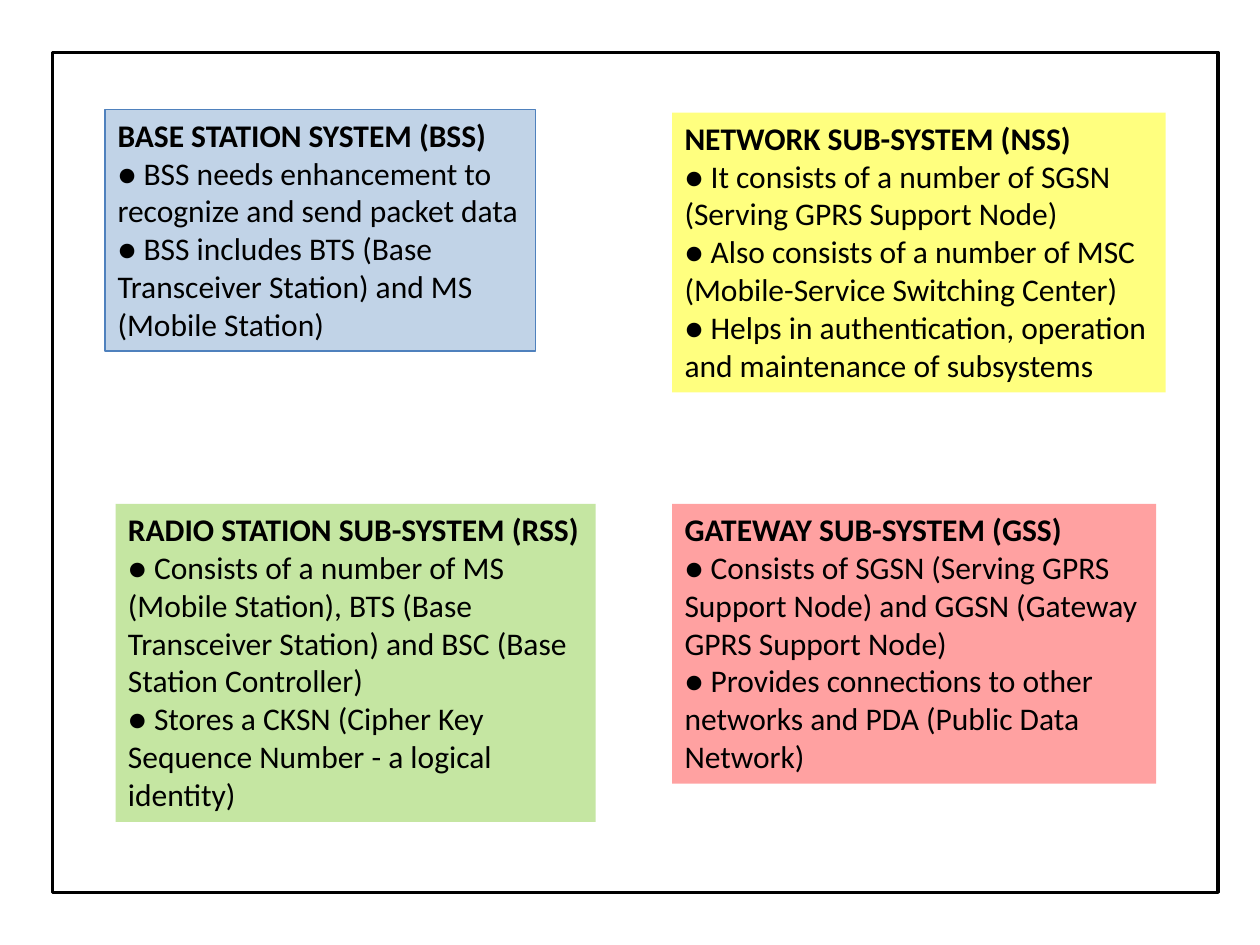
from typing import NamedTuple

from lxml import etree
from pptx import Presentation
from pptx.dml.color import RGBColor
from pptx.enum.shapes import MSO_SHAPE
from pptx.enum.text import MSO_AUTO_SIZE
from pptx.oxml.ns import qn
from pptx.util import Cm, Pt

RECTANGLE = MSO_SHAPE.RECTANGLE
FIT_SHAPE = MSO_AUTO_SIZE.SHAPE_TO_FIT_TEXT
BLANK_LAYOUT = 6

BLACK = RGBColor(0x00, 0x00, 0x00)
BLUE = RGBColor(0x4F, 0x81, 0xBD)
YELLOW = RGBColor(0xFF, 0xFF, 0x00)
GREEN = RGBColor(0x92, 0xD0, 0x50)
RED = RGBColor(0xFF, 0x00, 0x00)

RIGHT_COLUMN = 13.55
LOWER_ROW = 10.16


class Panel(NamedTuple):
    """A tinted text panel; lengths in cm, opacity in percent."""
    left: float
    top: float
    width: float
    height: float
    color: RGBColor
    opacity: int
    outlined: bool
    heading: str
    lines: list[str]


PANELS = [
    Panel(2.12, 2.21, 8.68, 4.87, BLUE, 35, True, "BASE STATION SYSTEM (BSS)", [
        "● BSS needs enhancement to",
        "recognize and send packet data",
        "● BSS includes BTS (Base",
        "Transceiver Station) and MS",
        "(Mobile Station)",
    ]),
    Panel(RIGHT_COLUMN, 2.27, 9.95, 5.64, YELLOW, 50, False, "NETWORK SUB-SYSTEM (NSS)", [
        "● It consists of a number of SGSN",
        "(Serving GPRS Support Node)",
        "● Also consists of a number of MSC",
        "(Mobile-Service Switching Center)",
        "● Helps in authentication, operation",
        "and maintenance of subsystems",
    ]),
    Panel(2.33, LOWER_ROW, 9.68, 6.41, GREEN, 53, False, "RADIO STATION SUB-SYSTEM (RSS)", [
        "● Consists of a number of MS",
        "(Mobile Station), BTS (Base",
        "Transceiver Station) and BSC (Base",
        "Station Controller)",
        "● Stores a CKSN (Cipher Key",
        "Sequence Number - a logical",
        "identity)",
    ]),
    Panel(RIGHT_COLUMN, LOWER_ROW, 9.76, 5.64, RED, 37, False, "GATEWAY SUB-SYSTEM (GSS)", [
        "● Consists of SGSN (Serving GPRS",
        "Support Node) and GGSN (Gateway",
        "GPRS Support Node)",
        "● Provides connections to other",
        "networks and PDA (Public Data",
        "Network)",
    ]),
]


def add_frame(s) -> None:
    frame = s.shapes.add_shape(RECTANGLE, Cm(1.06), Cm(1.06), Cm(23.5), Cm(16.93))
    frame.shadow.inherit = False
    frame.fill.background()
    frame.line.color.rgb = BLACK
    frame.line.width = Pt(2)


def add_panel(s, panel: Panel) -> None:
    sp = s.shapes.add_textbox(Cm(panel.left), Cm(panel.top),
                              Cm(panel.width), Cm(panel.height))
    sp.fill.solid()
    sp.fill.fore_color.rgb = panel.color
    color = sp.fill._xPr.find(f"{qn('a:solidFill')}/{qn('a:srgbClr')}")
    etree.SubElement(color, qn("a:alpha"), val=str(panel.opacity * 1000))
    if panel.outlined:
        sp.line.color.rgb = panel.color
        sp.line.width = Pt(0.75)

    tf = sp.text_frame
    tf.word_wrap = False
    tf.auto_size = FIT_SHAPE
    tf.text = "\n".join([panel.heading, *panel.lines])
    for i, p in enumerate(tf.paragraphs):
        p.font.name = "Calibri"
        p.font.size = Pt(18)
        p.font.bold = i == 0
        p.font.color.rgb = BLACK


def main() -> None:
    prs = Presentation()
    prs.slide_width, prs.slide_height = Cm(25.4), Cm(19.05)
    s = prs.slides.add_slide(prs.slide_layouts[BLANK_LAYOUT])
    add_frame(s)
    for panel in PANELS:
        add_panel(s, panel)
    prs.save("out.pptx")


if __name__ == "__main__":
    main()
